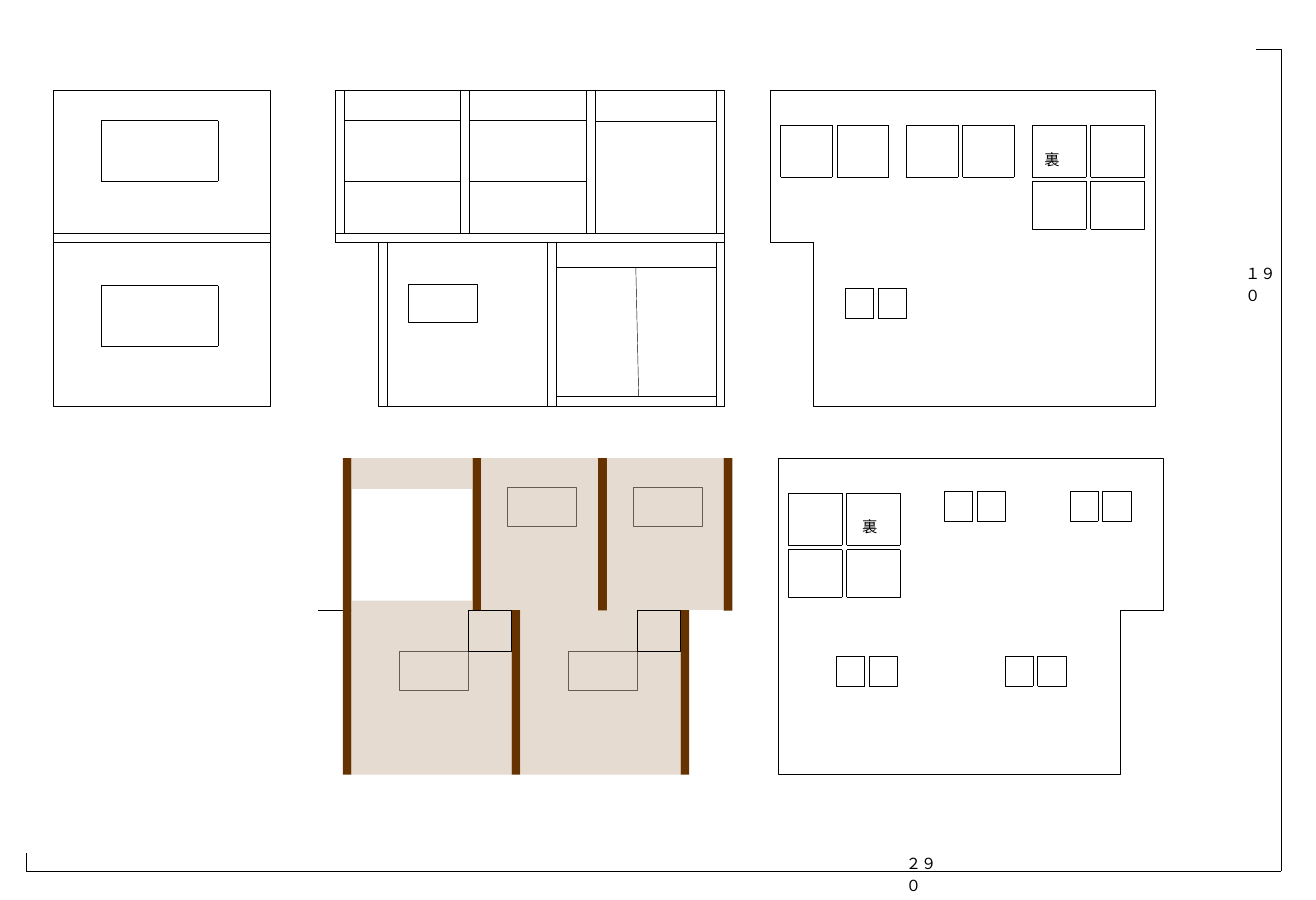
from lxml.etree import SubElement
from pptx import Presentation
from pptx.dml.color import RGBColor
from pptx.enum.shapes import MSO_CONNECTOR as Connector, MSO_SHAPE as Preset
from pptx.oxml.ns import qn
from pptx.util import Pt

FONT = "Noto Sans CJK JP"
INK, WOOD, BOARD = "000000", "663300", "CCB8A3"
TOP, SHELF, MIDDLE, BOTTOM = 59, 152.6, 158.5, 266.4
UPPER, LOWER = MIDDLE - TOP, BOTTOM - MIDDLE
POST, GAP = 5.8, 2.8
DROP = 241.2
MIRROR = 1266.5


def color(value):
    """Turn a hex string into a colour."""
    return RGBColor.from_string(value)


def draw_outline(shape):
    """Give a shape a thin line and no fill."""
    shape.shadow.inherit = False
    shape.fill.background()
    shape.line.color.rgb = color(INK)
    shape.line.width = Pt(0.28)


def add_frame(page, x, y, width, height):
    """Add an unfilled rectangle."""
    draw_outline(page.shapes.add_shape(Preset.RECTANGLE, Pt(x), Pt(y), Pt(width), Pt(height)))


def add_panel(page, x, y, width, height, fill, alpha=100):
    """Add a filled rectangle without a line."""
    panel = page.shapes.add_shape(Preset.RECTANGLE, Pt(x), Pt(y), Pt(width), Pt(height))
    panel.shadow.inherit = False
    panel.line.fill.background()
    panel.fill.solid()
    panel.fill.fore_color.rgb = color(fill)
    if alpha < 100:
        tint = panel._element.spPr.find(qn("a:solidFill"))[0]
        SubElement(tint, qn("a:alpha"), val=str(alpha * 1000))


def add_line(page, x1, y1, x2, y2):
    """Add a thin straight line."""
    line = page.shapes.add_connector(Connector.STRAIGHT, Pt(x1), Pt(y1), Pt(x2), Pt(y2))
    line.line.color.rgb = color(INK)
    line.line.width = Pt(0.28)
    SubElement(line._element.spPr, qn("a:effectLst"))


def add_path(page, points):
    """Add an open, unfilled outline."""
    corners = [(Pt(x), Pt(y)) for x, y in points]
    builder = page.shapes.build_freeform(*corners[0], scale=1)
    builder.add_line_segments(corners[1:], close=False)
    draw_outline(builder.convert_to_shape())


def add_label(page, x, y, width, text):
    """Add a small label."""
    box = page.shapes.add_textbox(Pt(x), Pt(y), Pt(width), Pt(10))
    frame = box.text_frame
    frame.margin_left = frame.margin_right = frame.margin_top = frame.margin_bottom = 0
    frame.word_wrap = True
    para = frame.paragraphs[0]
    para.line_spacing = Pt(14)
    span = para.add_run()
    span.text = text
    span.font.size = Pt(10)
    span.font.name = FONT
    span.font.color.rgb = color(INK)
    SubElement(span.font._element, qn("a:ea"), typeface=FONT)


def add_window(page, x, y, width=76.3, height=39.6, foot=0):
    """Add a window of four lines, its sides longer by the foot."""
    for level in (y, y + height):
        add_line(page, x, level, x + width, level)
    for side in (x, x + width):
        add_line(page, side, y, side, y + height + foot)


def add_wide_pair(page, x, y):
    """Add two square windows side by side."""
    for left in (x, x + 34 + GAP):
        add_window(page, left, y, 34, 34)


def add_small_pair(page, x, y):
    """Add two small openings, each closed on its inner side."""
    width, height = 18.5, 20
    right = x + 2 * width + GAP
    for outer, inner in ((x, x + width), (right, right - width)):
        add_path(page, [(inner, y), (outer, y), (outer, y + height), (inner, y + height)])
        add_line(page, inner, y, inner, y + height)


def add_four(page, x, y):
    """Add the large opening: four corners closed on their inner sides."""
    width, upper, lower = 35.3, 34, 31
    right, bottom = x + 2 * width + GAP, y + upper + GAP + lower
    for outer, inner in ((x, x + width), (right, right - width)):
        for edge, cross in ((y, y + upper), (bottom, bottom - lower)):
            add_path(page, [(inner, edge), (outer, edge), (outer, cross)])
            add_line(page, inner, edge, inner, cross)
            add_line(page, outer, cross, inner, cross)


def draw_side(page):
    """Draw the side view."""
    add_frame(page, 35.1, TOP, 141.9, BOTTOM - TOP)
    for y in (SHELF, MIDDLE):
        add_line(page, 35.1, y, 177, y)
    for y in (79.1, 187.1):
        add_window(page, 66.3, y)


def draw_front(page):
    """Draw the front view."""
    add_frame(page, 219.6, TOP, 254.9, UPPER)
    add_line(page, 219.6, SHELF, 474.5, SHELF)
    add_line(page, 219.6, MIDDLE, 474.5, MIDDLE)
    add_frame(page, 247.7, MIDDLE, 226.8, LOWER)
    for x, end in ((219.5, SHELF), (301.6, SHELF), (383.9, SHELF), (468.8, MIDDLE)):
        add_path(page, [(x, SHELF), (x, TOP), (x + POST, TOP), (x + POST, end), (x, end)][:5 if end == MIDDLE else 4])
    for x in (247.7, 358.5, 468.8):
        add_frame(page, x, MIDDLE, POST, LOWER)
    for x in (225.2, 307.5):
        add_window(page, x, 79.1, foot=2.9)
    add_frame(page, 389.7, 79.2, 79.1, SHELF - 79.2)
    add_frame(page, 267.4, 186.1, 45.4, 25.2)
    add_frame(page, 364.3, 175, 104.5, 84.7)
    add_line(page, 416.4, 175, 418.3, 259.7)


def draw_backs(page):
    """Draw the two mirrored back views."""
    upper = [(532.8, MIDDLE), (504.5, MIDDLE), (504.5, TOP), (756.8, TOP), (756.8, MIDDLE)]
    step = upper[1::-1]
    lower = [(756.8, MIDDLE), (756.8, BOTTOM), (532.8, BOTTOM), (532.8, MIDDLE)]
    for points in (upper, lower):
        add_path(page, points)
        add_path(page, [(MIRROR - x, y + DROP) for x, y in points])
    (x1, y1), (x2, y2) = step
    add_line(page, x1, y1, x2, y2)
    add_line(page, MIRROR - x1, y1 + DROP, MIRROR - x2, y2 + DROP)
    for x in (511.2, 593.6):
        add_wide_pair(page, x, 82)
    add_four(page, 676.2, 82.1)
    add_four(page, 516.3, 82.1 + DROP)
    add_small_pair(page, 553.6, 188.7)
    for x in (618.4, 700.7):
        add_small_pair(page, x, 321.7)
    for x in (547.7, 658.3):
        add_small_pair(page, x, 188.5 + DROP)
    add_label(page, 684, 96.5, 10.2, "裏")
    add_label(page, 564.7, 337, 10.2, "裏")


def draw_wooden(page):
    """Draw the coloured view."""
    top, middle = TOP + DROP, MIDDLE + DROP
    for x, y in ((261.4, 427), (372.2, 427), (414.6, 319.3), (332.2, 319.3)):
        add_frame(page, x, y, 45.4, 25.2)
    add_line(page, 208.2, middle, 224.7, middle)
    for x in (224.6, 309.6, 391.8, 474):
        add_panel(page, x, top, 5.6, 100, WOOD)
    for x in (224.6, 335.1, 445.7):
        add_panel(page, x, middle, 5.6, LOWER, WOOD)
    for x in (315.2, 397.4):
        add_panel(page, x, top, 76.4, UPPER, BOARD, 50)
    for y, height in ((top, 20.2), (393.6, 6)):
        add_panel(page, 230.2, y, 79.4, height, BOARD, 50)
    for x in (230.2, 340.7):
        add_panel(page, x, middle, 104.9, LOWER, BOARD, 50)
        add_frame(page, x + 76.6, middle, 28.2, 27.2)


def draw_dimensions(page):
    """Draw the sheet's height and width marks."""
    add_line(page, 838.9, 32.4, 838.9, 571)
    add_line(page, 822.4, 32.4, 838.9, 32.4)
    add_label(page, 815.4, 171.4, 20.4, "１９０")
    add_line(page, 17, 571, 838.9, 571)
    add_line(page, 17, 558.9, 17, 571)
    add_label(page, 593.3, 558, 20.4, "２９０")


def main():
    """Build the slide and save it."""
    deck = Presentation()
    deck.slide_width, deck.slide_height = Pt(861.84), Pt(589.68)
    page = deck.slides.add_slide(deck.slide_layouts[6])
    draw_side(page)
    draw_front(page)
    draw_backs(page)
    draw_wooden(page)
    draw_dimensions(page)
    deck.save("out.pptx")


if __name__ == "__main__":
    main()
